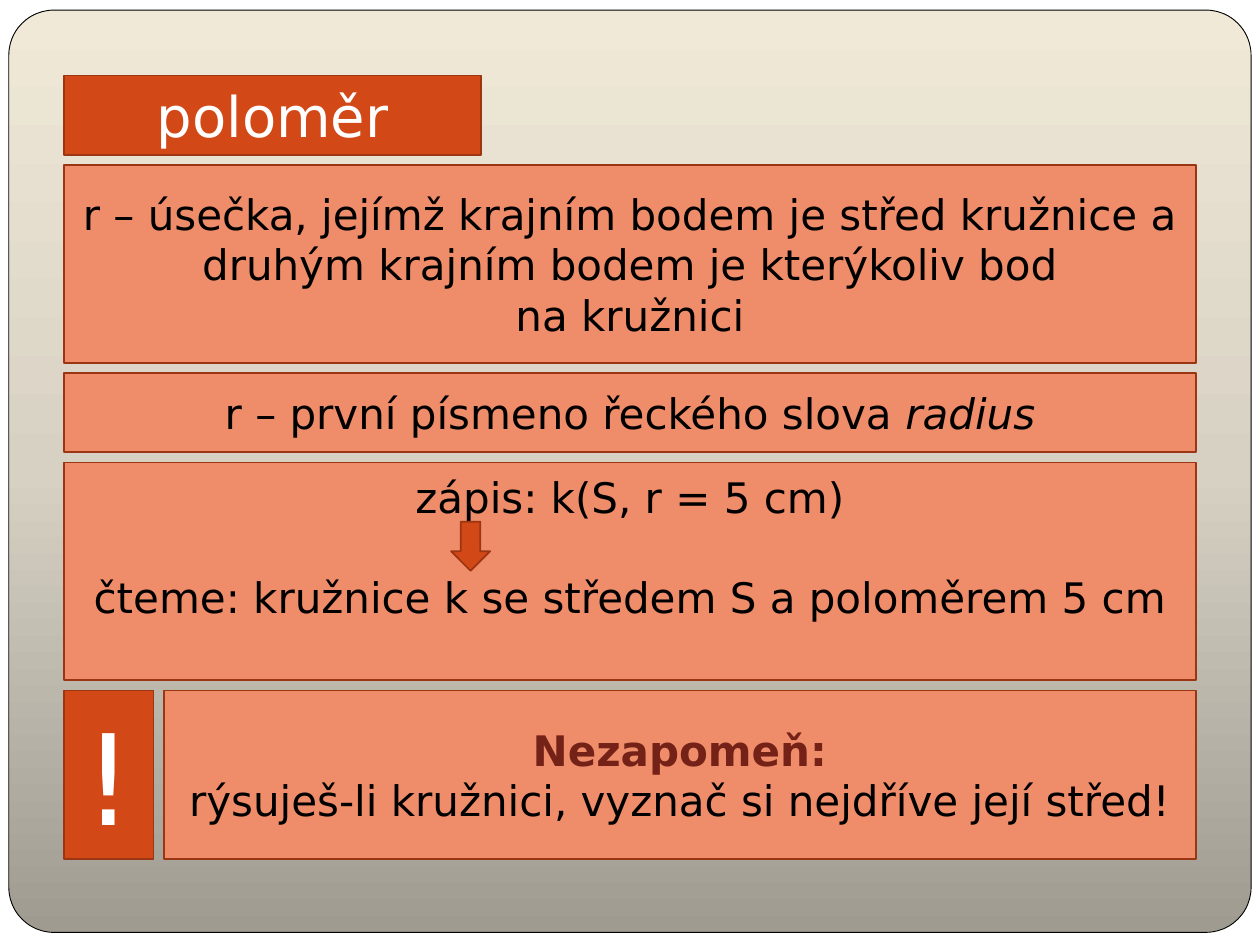
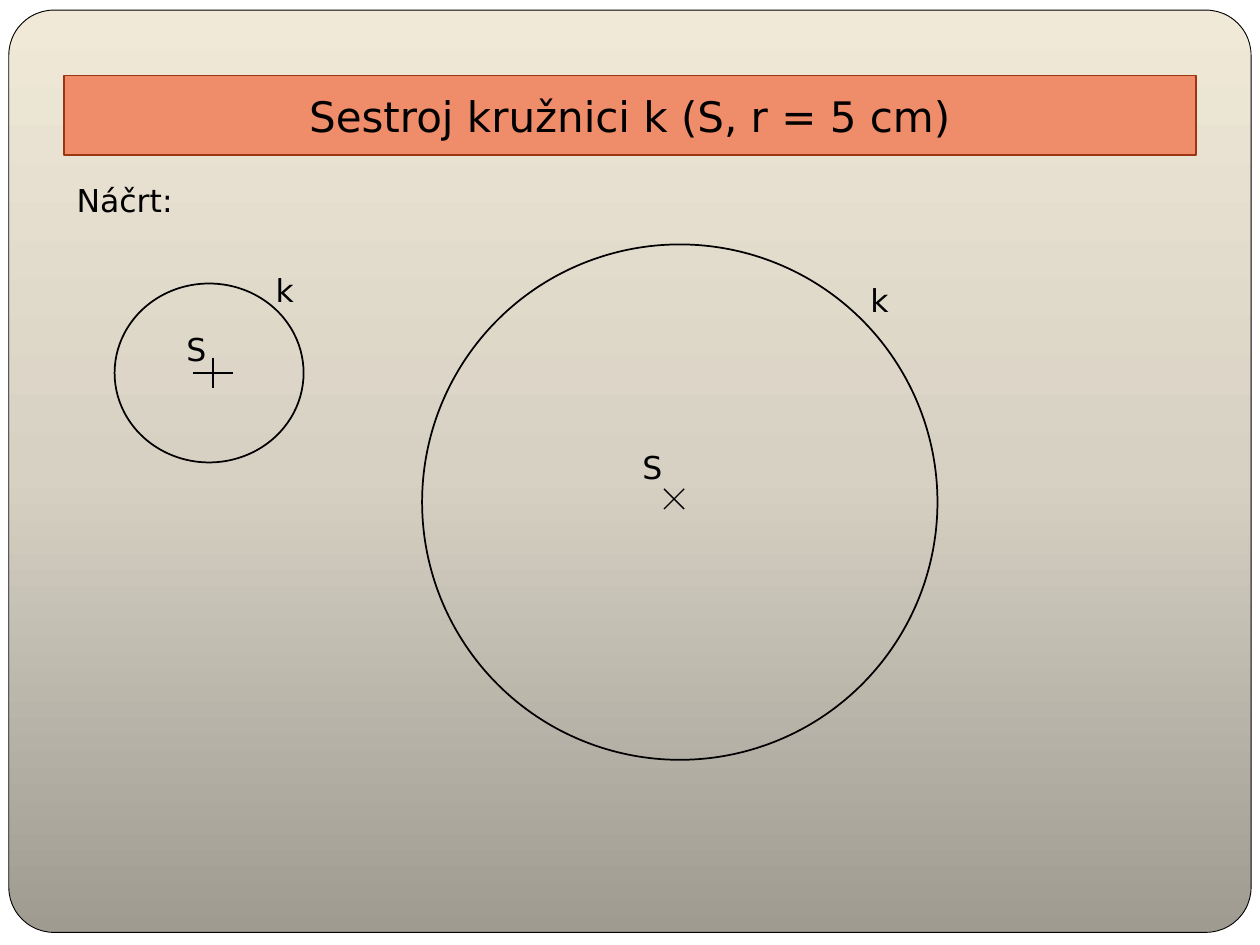
from copy import deepcopy

from lxml.etree import SubElement
from pptx import Presentation
from pptx.dml.color import RGBColor
from pptx.enum.shapes import MSO_CONNECTOR, MSO_SHAPE
from pptx.enum.text import MSO_ANCHOR, MSO_AUTO_SIZE, PP_ALIGN
from pptx.oxml.ns import qn
from pptx.util import Inches, Pt

FONT = "DejaVu Sans"
COLORS = {
    "white": "FFFFFF",
    "black": "000000",
    "orange": "D34817",
    "salmon": "EF8C6A",
    "edge": "9C3511",
    "warning": "742217",
}
GRADIENT = [(0, "9F9B91"), (0.5, "D7D1C4"), (1, "F0E9D8")]
LEFT, TOP, WIDTH, GAP = 0.51, 0.6, 8.98, 0.08
TITLE_HEIGHT = 0.63


def color(name):
    """Return the named colour."""
    return RGBColor.from_string(COLORS[name])


def paint_gradient(fill, element):
    """Fill with the shared three-stop vertical gradient."""
    fill.gradient()
    fill.gradient_angle = 90
    stops = next(element.iter(qn("a:gsLst")))
    stops.append(deepcopy(stops[0]))
    for stop, (position, value) in zip(fill.gradient_stops, GRADIENT):
        stop.position = position
        stop.color.rgb = RGBColor.from_string(value)


def add_figure(page, kind, box, fill=None, edge=None, weight=1):
    """Add a preset shape with a plain fill and outline."""
    shape = page.shapes.add_shape(kind, *map(Inches, box))
    shape.shadow.inherit = False
    paint(shape, fill, edge, weight)
    return shape


def paint(shape, fill, edge, weight=1):
    """Set the fill and outline, leaving out those not named."""
    if fill:
        shape.fill.solid()
        shape.fill.fore_color.rgb = color(fill)
    else:
        shape.fill.background()
    if edge:
        shape.line.color.rgb = color(edge)
        shape.line.width = Pt(weight)
    else:
        shape.line.fill.background()


def format_span(span, size, tone, bold=False, italic=False):
    """Format one run of text."""
    span.font.name = FONT
    span.font.size = Pt(size)
    span.font.color.rgb = color(tone)
    span.font.bold = bold
    span.font.italic = italic


def write_centred(shape, lines, size=24, tone="black"):
    """Write centred lines and return their paragraphs."""
    frame = shape.text_frame
    frame.word_wrap = True
    frame.auto_size = MSO_AUTO_SIZE.NONE
    frame.vertical_anchor = MSO_ANCHOR.MIDDLE
    frame.margin_left = frame.margin_right = Inches(0.1)
    frame.margin_top = frame.margin_bottom = Inches(0.05)
    frame.text = "\n".join(lines)
    for para in frame.paragraphs:
        para.alignment = PP_ALIGN.CENTER
        for span in para.runs:
            format_span(span, size, tone)
    return frame.paragraphs


def add_title(page, text, width, fill, size, tone):
    """Turn the title placeholder into the top band."""
    title = page.shapes.title
    title.left, title.top = Inches(LEFT), Inches(TOP)
    title.width, title.height = Inches(width), Inches(TITLE_HEIGHT)
    paint(title, fill, "edge")
    write_centred(title, [text], size, tone)


def add_panel(page, box, lines, fill="salmon", size=24, tone="black"):
    """Add a text panel and return it with its paragraphs."""
    panel = add_figure(page, MSO_SHAPE.RECTANGLE, box, fill, "edge")
    return panel, write_centred(panel, lines, size, tone)


def add_label(page, text, box):
    """Add a small text label."""
    label = page.shapes.add_textbox(*map(Inches, box))
    label.text_frame.word_wrap = True
    label.text_frame.text = text
    format_span(label.text_frame.paragraphs[0].runs[0], 18, "black")


def add_stroke(page, start, end):
    """Add a thin black line."""
    stroke = page.shapes.add_connector(
        MSO_CONNECTOR.STRAIGHT, *map(Inches, (*start, *end)))
    stroke.line.color.rgb = color("black")
    stroke.line.width = Pt(0.75)
    SubElement(stroke.element.spPr, qn("a:effectLst"))


def style_master(deck, page):
    """Give the master its gradient, white ground and rounded frame."""
    master = deck.slide_master
    paint_gradient(master.background.fill, master.element)
    ground = add_figure(page, MSO_SHAPE.RECTANGLE, (0, 0, 10, 7.5), "white")
    frame = add_figure(page, MSO_SHAPE.ROUNDED_RECTANGLE,
                       (0.07, 0.08, 9.86, 7.32), "white", "black", 0.5)
    frame.adjustments[0] = 0.049
    paint_gradient(frame.fill, frame.element)
    for index, shape in enumerate((ground, frame)):
        next(shape.element.iter(qn("p:cNvPr"))).set("id", str(100 + index))
        master.shapes.element.insert(2 + index, shape.element)


def add_notation(page, box):
    """Add the notation panel with the arrow between its two lines."""
    left, top = box[:2]
    panel, paras = add_panel(page, box, [
        "zápis: k(S, r = 5 cm)",
        "čteme: kružnice k se středem S a poloměrem 5 cm",
    ])
    paras[1].space_before = Pt(28)
    panel.text_frame.margin_bottom = Inches(0.44)
    add_figure(page, MSO_SHAPE.DOWN_ARROW,
               (left + 3.07, top + 0.47, 0.31, 0.39), "orange", "edge")


def add_reminder(page, box):
    """Add the exclamation mark and the reminder beside it."""
    left, top, width, height = box
    mark_width = 0.71
    add_panel(page, (left, top, mark_width, height), ["!"], "orange", 72, "white")
    offset = mark_width + GAP
    paras = add_panel(page, (left + offset, top, width - offset, height), [
        "Nezapomeň:",
        "rýsuješ-li kružnici, vyznač si nejdříve její střed!",
    ])[1]
    format_span(paras[0].runs[0], 24, "warning", bold=True)


def add_definition(page, box):
    """Add the definition of the radius."""
    add_panel(page, box, [
        "r – úsečka, jejímž krajním bodem je střed kružnice a "
        "druhým krajním bodem je kterýkoliv bod",
        "na kružnici",
    ])


def add_origin(page, box):
    """Add the origin of the letter r."""
    para = add_panel(page, box, ["r – první písmeno řeckého slova "])[1][0]
    span = para.add_run()
    span.text = "radius"
    format_span(span, 24, "black", italic=True)


def build_radius_page(page):
    """Stack the panels that explain the radius."""
    add_title(page, "poloměr", 3.31, "orange", 32, "white")
    top = TOP + TITLE_HEIGHT + GAP
    for add_row, height in ((add_definition, 1.57), (add_origin, 0.63),
                            (add_notation, 1.73), (add_reminder, 1.34)):
        add_row(page, (LEFT, top, WIDTH, height))
        top += height + GAP


def add_circle(page, box, centre, arms, centre_label, circle_label):
    """Draw a circle k with its marked centre S, placed within the box."""
    left, top = box[:2]
    add_figure(page, MSO_SHAPE.OVAL, box, edge="black")
    x, y = left + centre[0], top + centre[1]
    for across, down in arms:
        add_stroke(page, (x - across, y - down), (x + across, y + down))
    for text, (dx, dy, width) in (("S", centre_label), ("k", circle_label)):
        add_label(page, text, (left + dx, top + dy, width, 0.4))


def build_construction_page(page):
    """Show the sketch and the constructed circle."""
    add_title(page, "Sestroj kružnici k (S, r = 5 cm)", WIDTH, "salmon", 24, "black")
    add_label(page, "Náčrt:", (LEFT, 1.39, 1.57, 0.4))
    add_circle(page, (0.91, 2.25, 1.5, 1.42), (0.78, 0.71),
               [(0.16, 0), (0, 0.12)], (0.47, 0.32, 0.31), (1.18, -0.15, 0.24))
    add_circle(page, (3.35, 1.94, 4.09, 4.09), (2, 2.02),
               [(0.08, -0.08), (0.08, 0.08)], (1.65, 1.57, 0.39), (3.46, 0.24, 0.31))


def main():
    """Build and save the deck."""
    deck = Presentation()
    deck.slide_width, deck.slide_height = Inches(10), Inches(7.5)
    title_only = deck.slide_layouts[5]
    radius_page, construction_page = (
        deck.slides.add_slide(title_only) for _ in range(2))
    style_master(deck, radius_page)
    build_radius_page(radius_page)
    build_construction_page(construction_page)
    deck.save("out.pptx")


if __name__ == "__main__":
    main()
